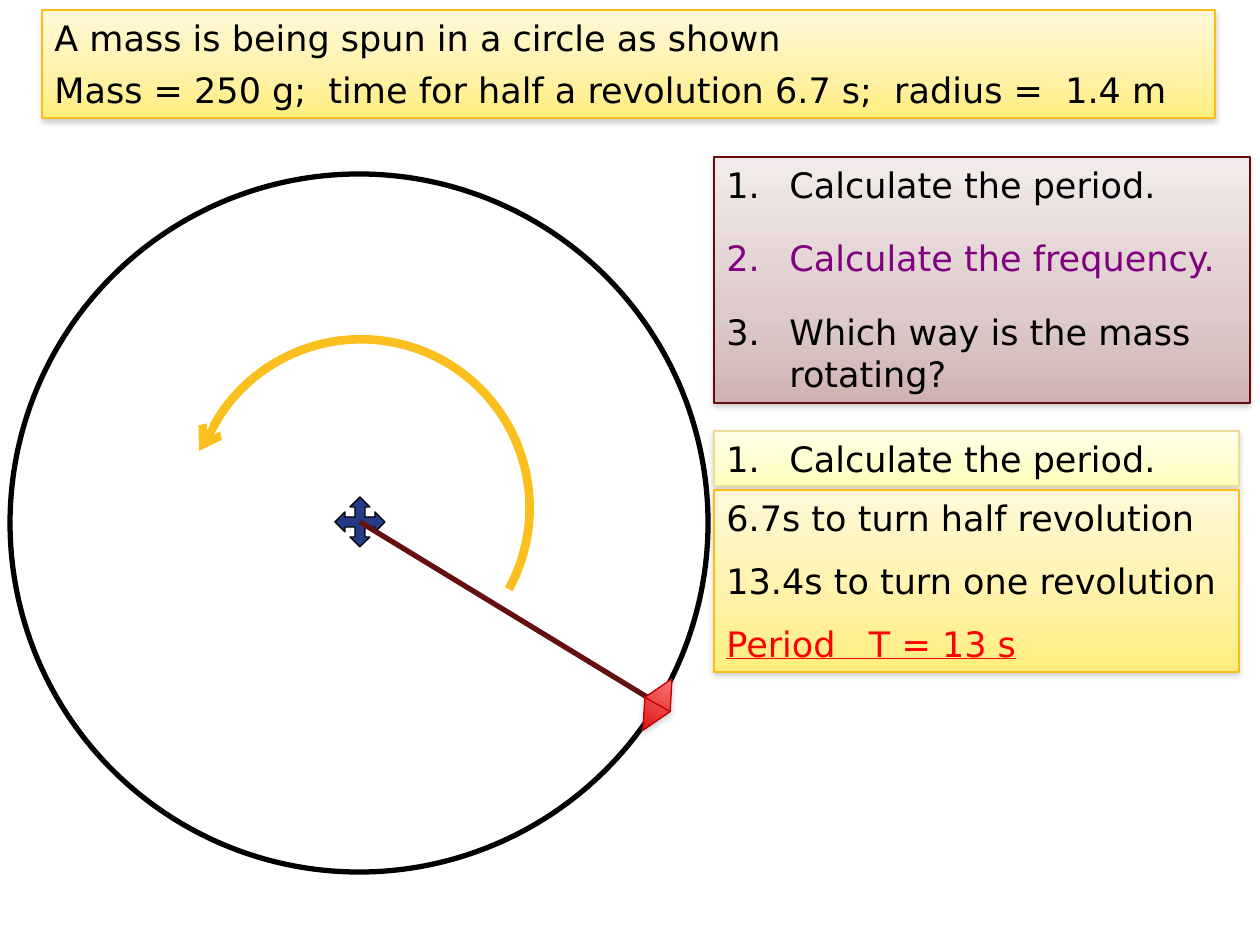
import pptx
import pptx.util
import pptx.dml.color
import pptx.enum.shapes
import pptx.enum.text
import pptx.oxml
import pptx.oxml.ns
import pptx.oxml.xmlchemy
from lxml import etree

RGB = pptx.dml.color.RGBColor
SHAPE = pptx.enum.shapes.MSO_SHAPE
qn = pptx.oxml.ns.qn

BLACK = RGB(0x00, 0x00, 0x00)
RED = RGB(0xFF, 0x00, 0x00)
PURPLE = RGB(0x80, 0x00, 0x80)
NAVY = RGB(0x26, 0x3B, 0x86)
MAROON = RGB(0x64, 0x0F, 0x10)
AMBER = RGB(0xFB, 0xC0, 0x1E)
GREY = RGB(0x80, 0x80, 0x80)

# Each look is a line colour and gradient stops from top to bottom
GOLD = (RGB(0xFB, 0xBE, 0x18), ((0, RGB(0xFF, 0xF9, 0xD9)),
        (65, RGB(0xFF, 0xF1, 0xA4)), (100, RGB(0xFF, 0xEE, 0x7C))))
ROSE = (RGB(0x64, 0x0C, 0x0D), ((0, RGB(0xF3, 0xEB, 0xEB)),
        (65, RGB(0xDD, 0xCA, 0xCA)), (100, RGB(0xD0, 0xB2, 0xB2))))
LEMON = (RGB(0xEC, 0xDD, 0x9C), ((0, RGB(0xFF, 0xFF, 0xE9)),
         (65, RGB(0xFF, 0xFF, 0xCC)), (100, RGB(0xFF, 0xFF, 0xB7))))
SCARLET = (RGB(0xBE, 0x00, 0x00), ((0, RGB(0xFF, 0x8C, 0x8C)),
           (100, RGB(0xDA, 0x00, 0x00))))


def px(n):
    return pptx.util.Emu(round(n * 914400 / 126))


def add(parent, tag, **attrs):
    return etree.SubElement(parent, qn(tag), {k: str(v) for k, v in attrs.items()})


class Deck:
    font = "DejaVu Sans"
    size = 20

    def __init__(self, width, height):
        self.prs = pptx.Presentation()
        self.prs.slide_width, self.prs.slide_height = px(width), px(height)
        self.slide = self.prs.slides.add_slide(self.prs.slide_layouts[6])

    def paint(self, s, fill=None, line=None, weight=0.75):
        s.shadow.inherit = False
        for part, color in ((s.fill, fill), (s.line.fill, line)):
            if color is None:
                part.background()
            else:
                part.solid()
                part.fore_color.rgb = color
        if line is not None:
            s.line.width = pptx.util.Pt(weight)

    def raise_up(self, s, look, alpha, distance):
        """Gradient fill, thin outline and soft shadow below."""
        line, stops = look
        self.paint(s, line=line)
        s.fill.gradient()
        s.fill.gradient_angle = 270
        sppr = s._element.spPr
        gs_list = sppr.find(qn("a:gradFill")).find(qn("a:gsLst"))
        for gs in list(gs_list):
            gs_list.remove(gs)
        for pos, color in stops:
            add(add(gs_list, "a:gs", pos=pos * 1000), "a:srgbClr", val=color)
        shadow = add(sppr.find(qn("a:effectLst")), "a:outerShdw",
                     blurRad=pptx.util.Pt(3.1), dist=pptx.util.Pt(distance),
                     dir=5400000, rotWithShape=0)
        add(add(shadow, "a:srgbClr", val=GREY), "a:alpha", val=alpha * 1000)

    def shape(self, kind, x, y, w, h, rotation=0):
        s = self.slide.shapes.add_shape(kind, px(x), px(y), px(w), px(h))
        s.rotation = rotation
        return s

    def polygon(self, points, fill, line):
        builder = self.slide.shapes.build_freeform(*map(px, points[0]), scale=1.0)
        builder.add_line_segments([tuple(map(px, pt)) for pt in points[1:]])
        self.paint(builder.convert_to_shape(), fill, line)

    def line(self, x1, y1, x2, y2, color, weight, arrow=False):
        s = self.slide.shapes.add_connector(
            pptx.enum.shapes.MSO_CONNECTOR.STRAIGHT, px(x1), px(y1), px(x2), px(y2))
        s.line.color.rgb = color
        s.line.width = pptx.util.Pt(weight)
        if arrow:
            add(s.line._get_or_add_ln(), "a:tailEnd", type="arrow")
        add(s._element.spPr, "a:effectLst")

    def panel(self, x, y, w, h, look, lines, after=0, numbered=False):
        """Raised text box; lines are (text, colour) pairs."""
        s = self.slide.shapes.add_textbox(px(x), px(y), px(w), px(h))
        self.raise_up(s, look, 38, 1.6)
        tf = s.text_frame
        tf.word_wrap = True
        tf.auto_size = pptx.enum.text.MSO_AUTO_SIZE.SHAPE_TO_FIT_TEXT
        tf.text = "\n".join(text for text, color in lines)
        for p, (text, color) in zip(tf.paragraphs, lines):
            p.space_after = pptx.util.Pt(after)
            if numbered:
                ppr = p._p.get_or_add_pPr()
                ppr.set("marL", str(px(63)))
                ppr.set("indent", str(px(-63)))
                add(ppr, "a:buFont", typeface="+mj-lt")
                add(ppr, "a:buAutoNum", type="arabicPeriod")
            font = p.runs[0].font
            font.name, font.size = self.font, pptx.util.Pt(self.size)
            font.color.rgb = color
            if color == RED:
                font.underline = True


def main():
    deck = Deck(1260, 945)

    # Circular path
    deck.paint(deck.shape(SHAPE.OVAL, 10, 174, 698, 698), line=BLACK, weight=3)

    # Four-way arrow at the centre: one arm, turned by quarter turns
    cx, cy = 360, 522
    arm = [(-5, -15), (-10, -15), (0, -25), (10, -15), (5, -15), (5, -5)]
    pivot = []
    for _ in range(4):
        pivot += [(cx + x, cy + y) for x, y in arm]
        arm = [(-y, x) for x, y in arm]
    deck.polygon(pivot, NAVY, BLACK)

    # String and mass
    deck.line(cx, cy, 665, 708, MAROON, 3)
    mass = deck.shape(SHAPE.FLOWCHART_SORT, 643, 675, 29, 59, 29.5)
    deck.raise_up(mass, SCARLET, 35, 1.8)

    # Questions
    deck.panel(714, 157, 536, 246, ROSE, [
        ("Calculate the period.", BLACK),
        ("Calculate the frequency.", PURPLE),
        ("Which way is the mass rotating?", BLACK)], after=18, numbered=True)

    # Direction of rotation
    arc = deck.shape(SHAPE.BLOCK_ARC, 188, 335, 346, 346, 28.8)
    for i, value in enumerate((108, 0, 0.025)):
        arc.adjustments[i] = value
    deck.paint(arc, AMBER)
    deck.line(218, 420, 199, 451, AMBER, 4.5, arrow=True)

    # Given values
    deck.panel(42, 10, 1173, 108, GOLD, [
        ("A mass is being spun in a circle as shown", BLACK),
        ("Mass = 250 g;  time for half a revolution 6.7 s;  radius =  1.4 m", BLACK)],
        after=6)

    # First answer
    deck.panel(714, 431, 525, 55, LEMON, [("Calculate the period.", BLACK)], numbered=True)
    deck.panel(714, 490, 525, 182, GOLD, [
        ("6.7s to turn half revolution", BLACK),
        ("13.4s to turn one revolution", BLACK),
        ("Period   T = 13 s", RED)], after=12)

    deck.prs.save("out.pptx")


if __name__ == "__main__":
    main()
